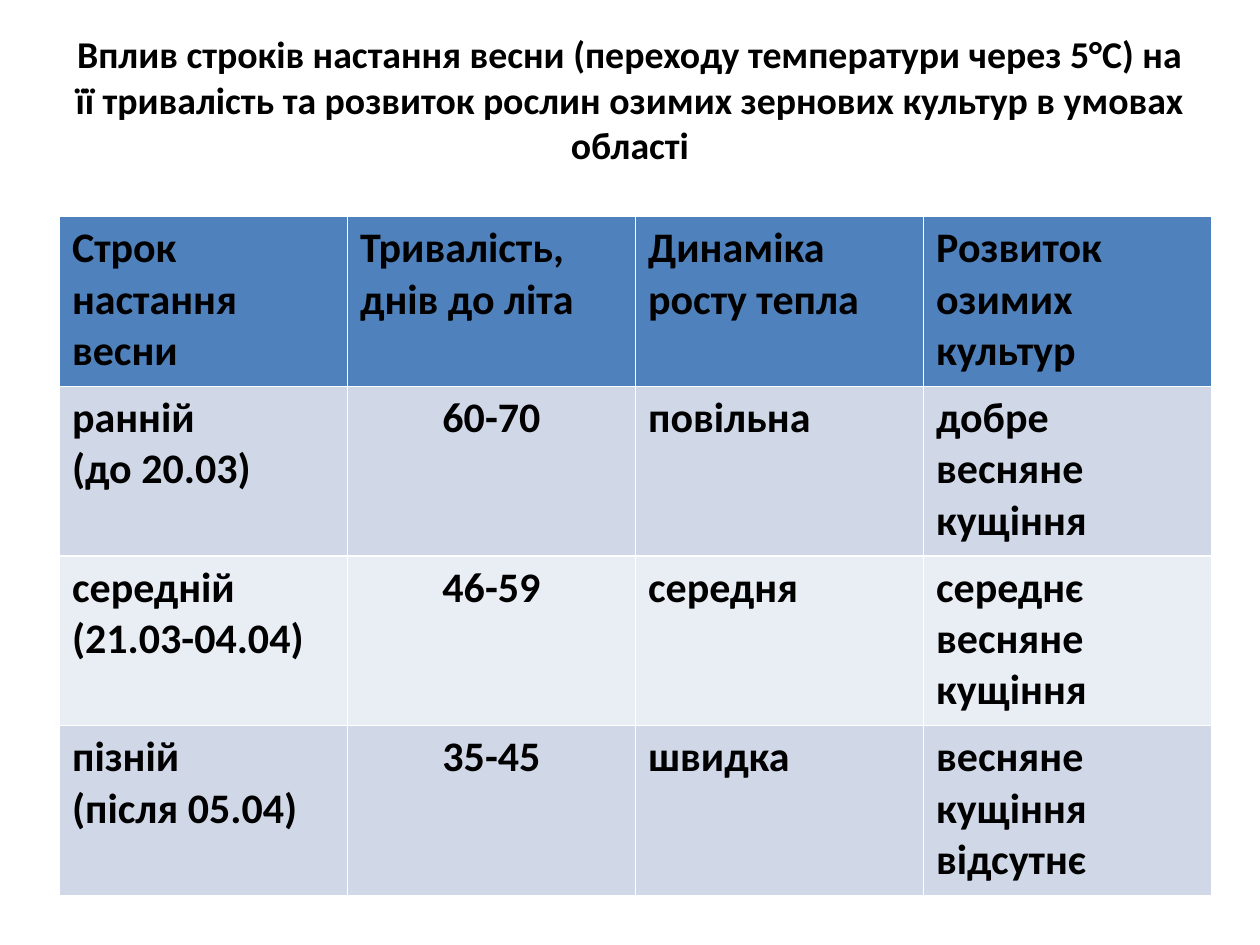
"""Builds a slide on how the onset of spring affects winter cereals."""
from dataclasses import dataclass
from typing import Any

from lxml.etree import SubElement
from pptx import Presentation
from pptx.dml.color import RGBColor
from pptx.enum.text import MSO_VERTICAL_ANCHOR as Anchor, PP_PARAGRAPH_ALIGNMENT as Align
from pptx.oxml.ns import qn
from pptx.util import Pt

BLACK = RGBColor(0x00, 0x00, 0x00)
WHITE = RGBColor(0xFF, 0xFF, 0xFF)
HEADER_BLUE = RGBColor(0x4F, 0x81, 0xBD)
BAND_DARK = RGBColor(0xD0, 0xD8, 0xE8)
BAND_LIGHT = RGBColor(0xE9, 0xED, 0xF4)

TITLE = (
    "Вплив строків настання весни (переходу температури через 5°С) на "
    "її тривалість та розвиток рослин озимих зернових культур в умовах області"
)
ROWS = [
    ["Строк настання весни", "Тривалість, днів до літа",
     "Динаміка росту тепла", "Розвиток озимих культур"],
    ["ранній\n(до 20.03)", "60-70", "повільна", "добре весняне кущіння"],
    ["середній\n(21.03-04.04)", "46-59", "середня", "середнє весняне кущіння"],
    ["пізній\n(після 05.04)", "35-45", "швидка", "весняне кущіння\nвідсутнє"],
]
DURATION_COLUMN = 1


@dataclass
class SlideBuilder:
    slide: Any
    font_name: str = "Calibri"
    title_size: float = 21.6
    table_size: float = 24
    border_width: float = 1

    def fill_text(self, frame, text, size, alignment):
        frame.text = text
        font_format = {"name": self.font_name, "size": Pt(size), "bold": True}
        for paragraph in frame.paragraphs:
            paragraph.alignment = alignment
            for run in paragraph.runs:
                for attribute, value in font_format.items():
                    setattr(run.font, attribute, value)
                run.font.color.rgb = BLACK

    def title(self, text, left, top, width, height):
        shape = self.slide.shapes.add_textbox(Pt(left), Pt(top), Pt(width), Pt(height))
        frame_format = {
            "word_wrap": True,
            "vertical_anchor": Anchor.MIDDLE,
            "margin_bottom": Pt(23.6),
        }
        for attribute, value in frame_format.items():
            setattr(shape.text_frame, attribute, value)
        self.fill_text(shape.text_frame, text, self.title_size, Align.CENTER)

    def borders(self, cell):
        properties = cell._tc.get_or_add_tcPr()
        for index, side in enumerate(("lnL", "lnR", "lnT", "lnB")):
            line = SubElement(properties, qn(f"a:{side}"), w=str(Pt(self.border_width)))
            fill = SubElement(line, qn("a:solidFill"))
            SubElement(fill, qn("a:srgbClr"), val=str(WHITE))
            properties.insert(index, line)

    def table(self, rows, left, top, column_width, row_height):
        column_count = len(rows[0])
        table = self.slide.shapes.add_table(
            len(rows), column_count, Pt(left), Pt(top),
            Pt(column_width * column_count), Pt(row_height * len(rows)),
        ).table
        for column in table.columns:
            column.width = Pt(column_width)
        for row_index, texts in enumerate(rows):
            table.rows[row_index].height = Pt(row_height)
            band = BAND_DARK if row_index % 2 else BAND_LIGHT
            for column_index, text in enumerate(texts):
                cell = table.cell(row_index, column_index)
                centred = row_index > 0 and column_index == DURATION_COLUMN
                alignment = Align.CENTER if centred else Align.LEFT
                self.fill_text(cell.text_frame, text, self.table_size, alignment)
                cell.fill.solid()
                cell.fill.fore_color.rgb = band if row_index else HEADER_BLUE
                self.borders(cell)


def main():
    presentation = Presentation()
    presentation.slide_width, presentation.slide_height = Pt(720), Pt(540)
    builder = SlideBuilder(presentation.slides.add_slide(presentation.slide_layouts[6]))
    builder.title(TITLE, 36, 21.6, 648, 90)
    builder.table(ROWS, 34, 123.8, 164.6, 97)
    presentation.save("out.pptx")


if __name__ == "__main__":
    main()
